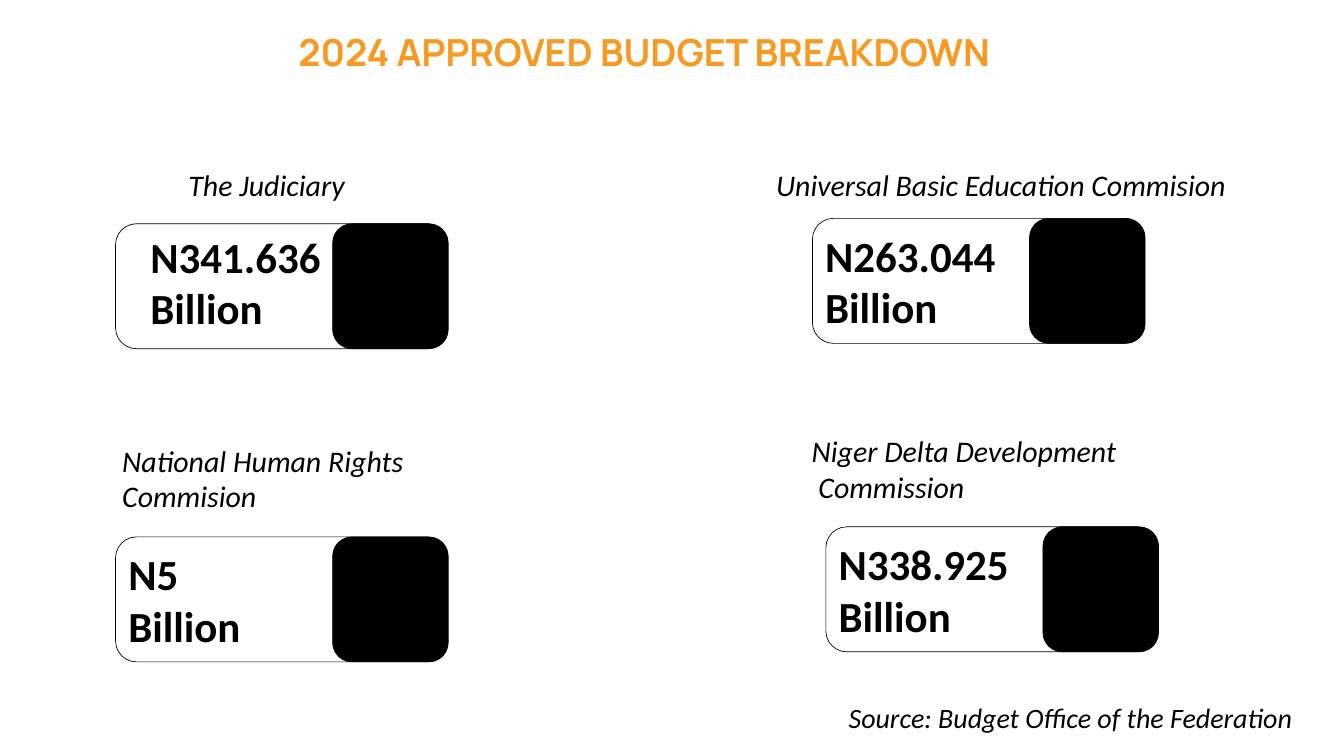
import pptx
import pptx.dml.color
import pptx.enum.shapes
import pptx.enum.text
import pptx.util
from pptx.util import Inches

COLOURS = {"title": "F89921", "ink": "000000"}
ALIGN = pptx.enum.text.PP_ALIGN
CARD_WIDTH, CARD_HEIGHT, BLOCK_WIDTH = 4.94, 1.86, 1.72
BLOCK_OFFSET = 3.23


def colour(name):
    return pptx.dml.color.RGBColor.from_string(COLOURS[name])


def write(frame, text, size=32, font="Calibri", ink="ink", bold=False,
          italic=False, align=ALIGN.LEFT, spacing=None):
    """Fill a text frame, one paragraph for each line of the text."""
    frame.word_wrap = True
    frame.margin_left = frame.margin_right = Inches(0.1)
    frame.margin_top = frame.margin_bottom = Inches(0.1)
    for index, line in enumerate(text.split("\n")):
        para = frame.add_paragraph() if index else frame.paragraphs[0]
        para.alignment = align
        if spacing:
            para.line_spacing = spacing
        span = para.add_run()
        span.text = line
        span.font.size = pptx.util.Pt(size)
        span.font.name = font
        span.font.bold = bold
        span.font.italic = italic
        span.font.color.rgb = colour(ink)


class BudgetSlide:
    def __init__(self, deck):
        self.page = deck.slides.add_slide(deck.slide_layouts[6])

    def label(self, left, top, width, height, text, **style):
        box = self.page.shapes.add_textbox(
            Inches(left), Inches(top), Inches(width), Inches(height))
        write(box.text_frame, text, **style)
        box.text_frame.auto_size = pptx.enum.text.MSO_AUTO_SIZE.SHAPE_TO_FIT_TEXT

    def rounded(self, left, top, width, corner, filled=False):
        box = self.page.shapes.add_shape(
            pptx.enum.shapes.MSO_SHAPE.ROUNDED_RECTANGLE,
            Inches(left), Inches(top), Inches(width), Inches(CARD_HEIGHT))
        box.adjustments[0] = corner
        box.shadow.inherit = False
        if filled:
            box.fill.solid()
            box.fill.fore_color.rgb = colour("ink")
        else:
            box.fill.background()
        box.line.color.rgb = colour("ink")
        box.line.width = pptx.util.Pt(0.75)
        return box

    def card(self, left, top, amount=None):
        """Draw an outlined card with a solid block at its right end."""
        outline = self.rounded(left, top, CARD_WIDTH, 0.167)
        if amount:
            write(outline.text_frame, amount, size=46, bold=True)
            outline.text_frame.vertical_anchor = pptx.enum.text.MSO_ANCHOR.MIDDLE
        self.rounded(left + BLOCK_OFFSET, top, BLOCK_WIDTH, 0.167, filled=True)


def main():
    deck = pptx.Presentation()
    deck.slide_width, deck.slide_height = Inches(20), Inches(11.25)
    slide = BudgetSlide(deck)

    slide.label(1.72, 0.2, 15.73, 0.88, "2024 APPROVED BUDGET BREAKDOWN", size=40,
                font="Manrope", ink="title", bold=True, align=ALIGN.CENTER, spacing=1.2)

    cards = [
        (1.72, 3.33, None),
        (1.72, 7.99, "N5\nBillion"),
        (12.09, 3.25, "N263.044\nBillion"),
        (12.29, 7.84, "N338.925\nBillion"),
    ]
    for left, top, amount in cards:
        slide.card(left, top, amount)
    slide.label(2.14, 3.33, 2.81, 1.75, "N341.636\nBillion", size=46, bold=True)

    agencies = [
        (1.72, 2.38, 4.6, 0.74, "The Judiciary ", ALIGN.CENTER),
        (1.72, 6.48, 4.6, 1.28, "National Human Rights Commision", ALIGN.LEFT),
        (11.45, 2.38, 7.9, 0.74, "Universal Basic Education Commision", ALIGN.LEFT),
        (11.98, 6.34, 5.16, 1.28, "Niger Delta Development\n Commission", ALIGN.LEFT),
    ]
    for left, top, width, height, name, align in agencies:
        slide.label(left, top, width, height, name, italic=True, align=align)

    slide.label(12.53, 10.32, 7.5, 0.71, "Source: Budget Office of the Federation",
                size=30, italic=True)
    deck.save("out.pptx")


if __name__ == "__main__":
    main()
